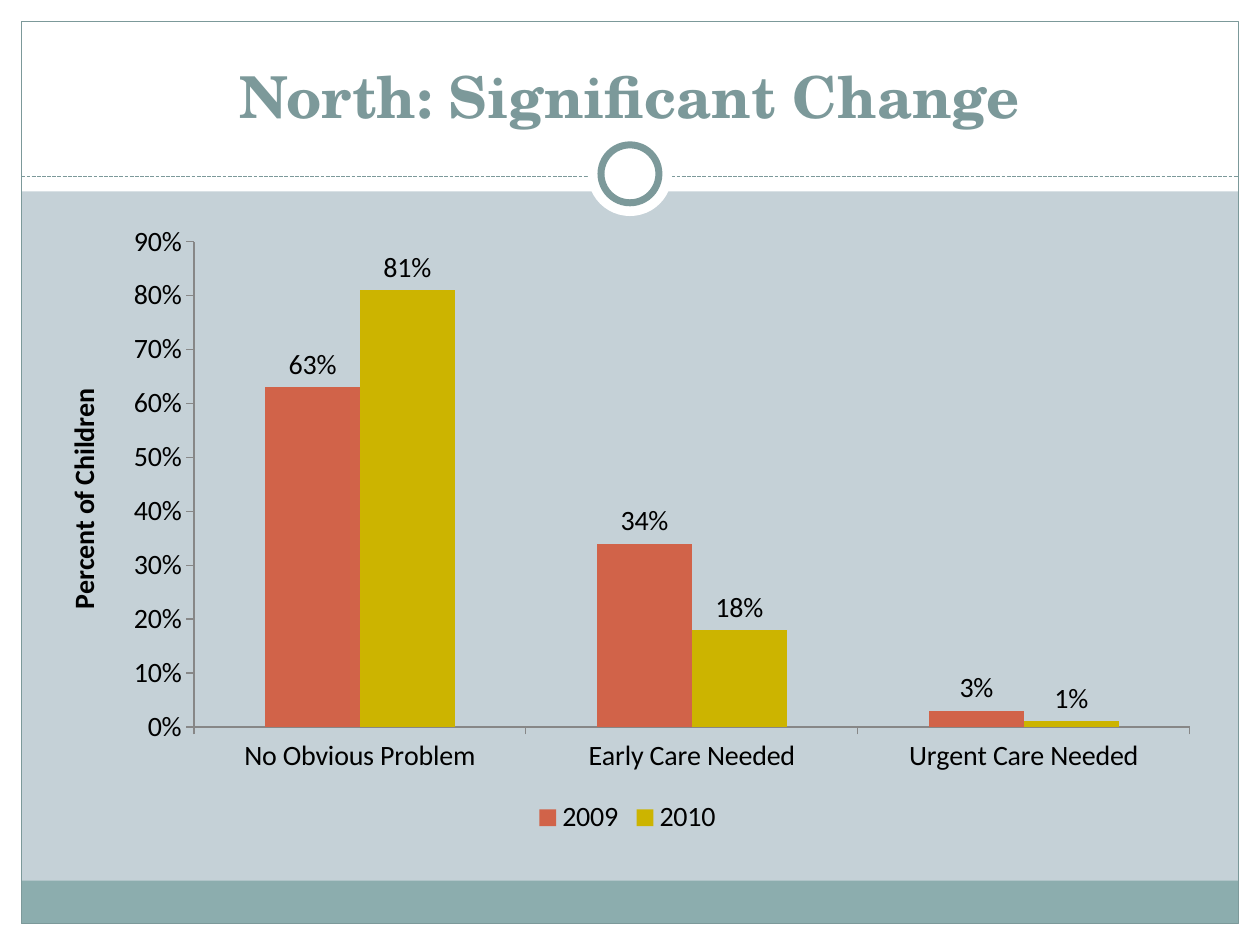
from lxml import etree
from pptx import Presentation
from pptx.chart.data import CategoryChartData
from pptx.dml.color import RGBColor
from pptx.enum.chart import XL_CHART_TYPE as ChartType
from pptx.enum.chart import XL_LABEL_POSITION as LabelPosition
from pptx.enum.chart import XL_LEGEND_POSITION as LegendPosition
from pptx.enum.chart import XL_TICK_MARK as TickMark
from pptx.enum.dml import MSO_LINE as LineStyle
from pptx.enum.shapes import MSO_CONNECTOR as Connector
from pptx.enum.shapes import MSO_SHAPE as Shape
from pptx.enum.text import MSO_ANCHOR as Anchor
from pptx.enum.text import PP_ALIGN as Align
from pptx.oxml import parse_xml
from pptx.oxml.ns import nsdecls, qn
from pptx.util import Inches, Pt

WHITE = RGBColor(0xFF, 0xFF, 0xFF)
BLACK = RGBColor(0, 0, 0)
MIST = RGBColor(0xC5, 0xD1, 0xD7)
TEAL = RGBColor(0x7C, 0x99, 0x9A)
BAND = RGBColor(0x8C, 0xAD, 0xAE)
AXIS = RGBColor(0x87, 0x87, 0x87)
RED = RGBColor(0xD1, 0x63, 0x49)
GOLD = RGBColor(0xCC, 0xB4, 0x00)

WIDTH, HEIGHT = 10, 7.5
MARGIN = 0.17
CATEGORIES = ["No Obvious Problem", "Early Care Needed", "Urgent Care Needed"]
SERIES = [("2009", (0.63, 0.34, 0.03), RED), ("2010", (0.81, 0.18, 0.01), GOLD)]


def add_panel(page, box, fill=None, line=None, weight=0.75, kind=Shape.RECTANGLE):
    panel = page.shapes.add_shape(kind, *map(Inches, box))
    panel.shadow.inherit = False
    if fill is None:
        panel.fill.background()
    else:
        panel.fill.solid()
        panel.fill.fore_color.rgb = fill
    if line is None:
        panel.line.fill.background()
    else:
        panel.line.color.rgb = line
        panel.line.width = Pt(weight)


def add_frame(page, box):
    left, top, width, height = box
    right, bottom = left + width, top + height

    # White margins and header, then the footer band and outline
    for margin in [(left, bottom - MARGIN, width, MARGIN), (left, top, width, 1.52),
                   (left, top, MARGIN, height), (right - MARGIN, top, MARGIN, height)]:
        add_panel(page, margin, WHITE)
    inner = width - 2 * MARGIN
    add_panel(page, (left + MARGIN, bottom - MARGIN - 0.34, inner, 0.34), BAND)
    add_panel(page, (left + MARGIN, top + MARGIN, inner, height - 2 * MARGIN), line=TEAL)

    # Dashed divider
    rule_y = Inches(top + 1.4)
    rule = page.shapes.add_connector(
        Connector.STRAIGHT, Inches(left + MARGIN), rule_y, Inches(right - MARGIN), rule_y)
    rule.line.color.rgb = TEAL
    rule.line.width = Pt(0.75)
    rule.line.dash_style = LineStyle.SQUARE_DOT
    properties = rule._element.spPr
    properties.find(qn("a:ln")).find(qn("a:prstDash")).set("val", "sysDash")
    etree.SubElement(properties, qn("a:effectLst"))

    # Concentric circles at the middle of the divider
    for size, line in [(0.67, None), (0.46, TEAL)]:
        circle = (left + (width - size) / 2, top + 1.38 - size / 2, size, size)
        add_panel(page, circle, WHITE, line, 4, Shape.OVAL)


def add_title(page, box, text):
    frame = page.shapes.add_textbox(*map(Inches, box)).text_frame
    frame.word_wrap = True
    frame.vertical_anchor = Anchor.BOTTOM
    para = frame.paragraphs[0]
    para.text = text
    para.alignment = Align.CENTER
    para.font.name = "TeX Gyre Schola"
    para.font.size = Pt(33)
    para.font.bold = True
    para.font.color.rgb = TEAL


def place_plot(chart, x, y, width, height):
    """Fix the inner plot area, as fractions of the chart."""
    area = chart._chartSpace.chart.plotArea
    for old in area.findall(qn("c:layout")):
        area.remove(old)
    area.insert(0, parse_xml(
        f'<c:layout {nsdecls("c")}><c:manualLayout><c:layoutTarget val="inner"/>'
        f'<c:xMode val="edge"/><c:yMode val="edge"/><c:x val="{x}"/><c:y val="{y}"/>'
        f'<c:w val="{width}"/><c:h val="{height}"/></c:manualLayout></c:layout>'))


def add_column_chart(page, box):
    data = CategoryChartData(number_format="0%")
    data.categories = CATEGORIES
    for name, values, _ in SERIES:
        data.add_series(name, values)
    chart = page.shapes.add_chart(
        ChartType.COLUMN_CLUSTERED, *map(Inches, box), data).chart
    chart.has_title = False
    chart.font.name = "Calibri"
    chart.font.size = Pt(16)
    chart.font.color.rgb = BLACK
    place_plot(chart, 0.13, 0.05, 0.85, 0.77)

    # Legend
    chart.has_legend = True
    chart.legend.position = LegendPosition.BOTTOM
    chart.legend.include_in_layout = False

    # Axes
    for axis in (chart.category_axis, chart.value_axis):
        axis.has_major_gridlines = False
        axis.major_tick_mark = TickMark.OUTSIDE
        axis.minor_tick_mark = TickMark.NONE
        axis.format.line.color.rgb = AXIS
        axis.format.line.width = Pt(0.75)
    scale = chart.value_axis
    scale.minimum_scale, scale.maximum_scale, scale.major_unit = 0, 0.9, 0.1
    scale.tick_labels.number_format = "0%"
    scale.tick_labels.number_format_is_linked = False
    heading = scale.axis_title.text_frame.paragraphs[0]
    heading.text = "Percent of Children"
    heading.font.name = "Calibri"
    heading.font.size = Pt(16)
    heading.font.bold = True
    heading.font.color.rgb = BLACK

    # Columns and their labels
    plot = chart.plots[0]
    plot.gap_width = 150
    plot.overlap = 0
    plot.vary_by_categories = False
    for series, (_, _, color) in zip(plot.series, SERIES):
        series.format.fill.solid()
        series.format.fill.fore_color.rgb = color
        labels = series.data_labels
        labels.show_value = True
        labels.position = LabelPosition.OUTSIDE_END
        labels.number_format = "0%"
        labels.number_format_is_linked = False


def main():
    deck = Presentation()
    deck.slide_width, deck.slide_height = Inches(WIDTH), Inches(HEIGHT)
    page = deck.slides.add_slide(deck.slide_layouts[6])
    page.background.fill.solid()
    page.background.fill.fore_color.rgb = MIST
    add_frame(page, (0, 0, WIDTH, HEIGHT))
    add_title(page, (0.33, 0.25, 9.33, 0.83), "North: Significant Change")
    add_column_chart(page, (0.33, 1.67, 9.3, 5))
    deck.save("out.pptx")


if __name__ == "__main__":
    main()
